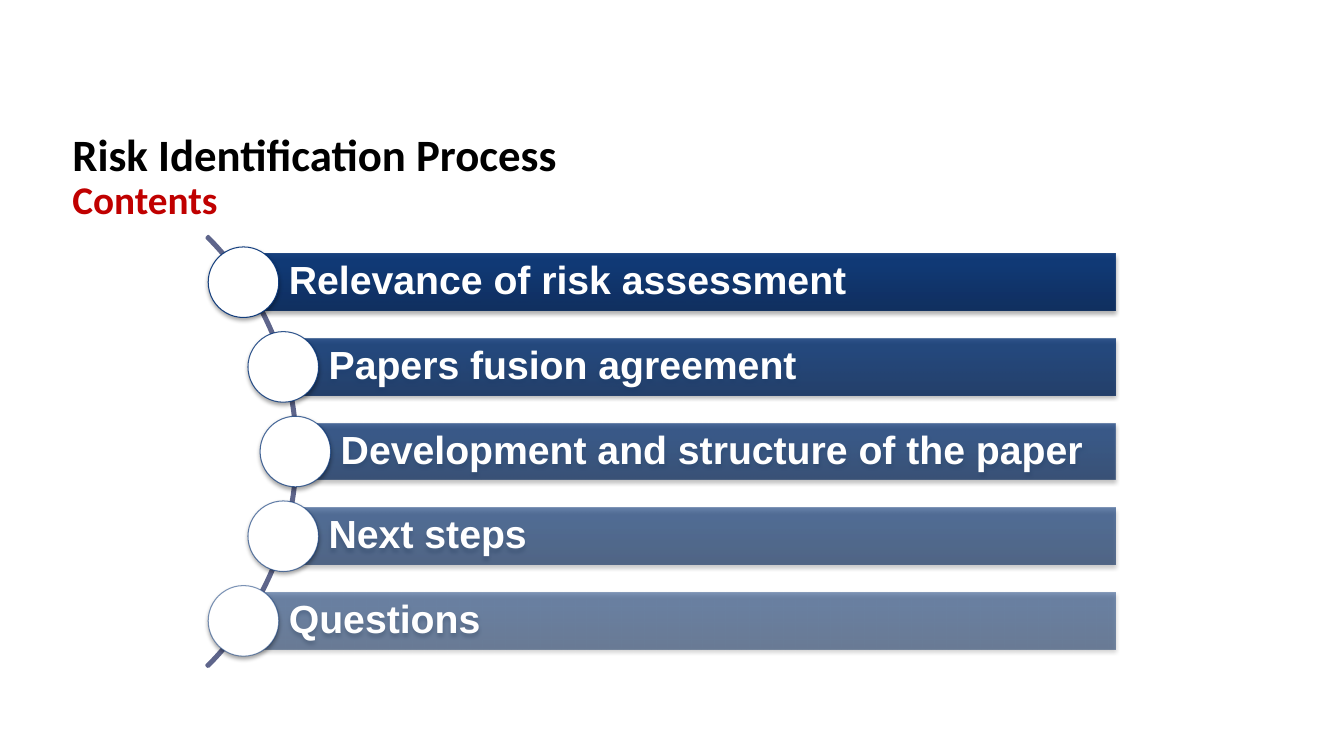
from math import sqrt

from lxml import etree
from pptx import Presentation
from pptx.dml.color import RGBColor
from pptx.enum import shapes, text
from pptx.oxml.ns import qn
from pptx.util import Inches, Pt

ITEMS = ["Relevance of risk assessment", "Papers fusion agreement",
         "Development and structure of the paper", "Next steps", "Questions"]
BAR_STOPS = [(0, "002357"), (80, "002E70"), (100, "002E71")]


def rgb(value):
    return RGBColor.from_string(value)


def add_color(parent, color, opacity):
    clr = etree.SubElement(parent, qn("a:srgbClr"), val=color)
    etree.SubElement(clr, qn("a:alpha"), val=str(opacity * 1000))


def add_shape(slide, kind, x, y, w, h):
    sp = slide.shapes.add_shape(kind, Inches(x), Inches(y), Inches(w), Inches(h))
    sp.shadow.inherit = False
    return sp


def add_shadow(sp):
    effects = sp._element.spPr.find(qn("a:effectLst"))
    shadow = etree.SubElement(effects, qn("a:outerShdw"), blurRad=str(Pt(3.1)),
                              dist=str(Pt(1.8)), dir="5400000", rotWithShape="0")
    add_color(shadow, "000000", 35)


def add_title(slide, x, y, w, h):
    tf = slide.shapes.add_textbox(Inches(x), Inches(y), Inches(w), Inches(h)).text_frame
    tf.word_wrap = True
    tf.vertical_anchor = text.MSO_ANCHOR.MIDDLE
    p = tf.paragraphs[0]
    p.line_spacing = 0.9
    p.font.name = "Calibri"
    p.font.bold = True
    for i, (line, size, color) in enumerate([("Risk Identification Process", 32, "000000"),
                                             ("Contents", 28, "C00000")]):
        if i:
            p.add_line_break()
        r = p.add_run()
        r.text = line
        r.font.size = Pt(size)
        r.font.color.rgb = rgb(color)


def add_bar(slide, label, opacity, x, y, w, h):
    sp = add_shape(slide, shapes.MSO_SHAPE.RECTANGLE, x, y, w, h)
    sp.line.fill.background()
    add_shadow(sp)

    # Translucent gradient, darkest at the bottom
    sp.fill.gradient()
    sp.fill.gradient_angle = 90
    stops = next(sp._element.spPr.iter(qn("a:gsLst")))
    for stop in list(stops):
        stops.remove(stop)
    for pos, color in BAR_STOPS:
        add_color(etree.SubElement(stops, qn("a:gs"), pos=str(pos * 1000)), color, opacity)

    # Label
    tf = sp.text_frame
    tf.word_wrap = True
    tf.vertical_anchor = text.MSO_ANCHOR.MIDDLE
    tf.margin_left = Inches(0.45)
    tf.margin_right = tf.margin_top = tf.margin_bottom = Inches(0.08)
    p = tf.paragraphs[0]
    p.text = label
    p.alignment = text.PP_ALIGN.LEFT
    p.line_spacing = 0.9
    p.font.name = "Arial"
    p.font.size = Pt(28)
    p.font.bold = True
    p.font.color.rgb = rgb("FFFFFF")


def add_dot(slide, opacity, cx, cy, size):
    sp = add_shape(slide, shapes.MSO_SHAPE.OVAL, cx - size / 2, cy - size / 2, size, size)
    sp.fill.solid()
    sp.fill.fore_color.rgb = rgb("FFFFFF")
    sp.line.width = Pt(0.75)
    sp.line.color.rgb = rgb("002F74")
    clr = next(sp.line._ln.iter(qn("a:srgbClr")))
    etree.SubElement(clr, qn("a:alpha"), val=str(opacity * 1000))
    add_shadow(sp)


def add_contents(slide, cx, cy, right):
    """Curved list around an arc centred at (cx, cy), with bars ending at right."""
    # Arc
    r = 3.02
    arc = add_shape(slide, shapes.MSO_SHAPE.BLOCK_ARC, cx - r, cy - r, 2 * r, 2 * r)
    for i, value in enumerate([189, 27, 0.0036]):
        arc.adjustments[i] = value
    arc.fill.background()
    arc.line.color.rgb = rgb("5E658B")
    arc.line.width = Pt(2)

    # Bars and dots, evenly spaced down the arc
    pitch, bar_h, dot_r = 0.84, 0.56, 3.0
    for i, label in enumerate(ITEMS):
        dy = (i - (len(ITEMS) - 1) / 2) * pitch
        x, y = cx + sqrt(dot_r ** 2 - dy ** 2), cy + dy
        opacity = 90 - 10 * i
        add_bar(slide, label, opacity, x, y - bar_h / 2, right - x, bar_h)
        add_dot(slide, opacity, x, y, 0.7)


def main():
    prs = Presentation()
    prs.slide_width, prs.slide_height = Inches(13.33), Inches(7.5)
    slide = prs.slides.add_slide(prs.slide_layouts[6])
    add_title(slide, 0.62, 1.09, 7.17, 1.35)
    add_contents(slide, -0.07, 4.48, 11.06)
    prs.save("out.pptx")


if __name__ == "__main__":
    main()
